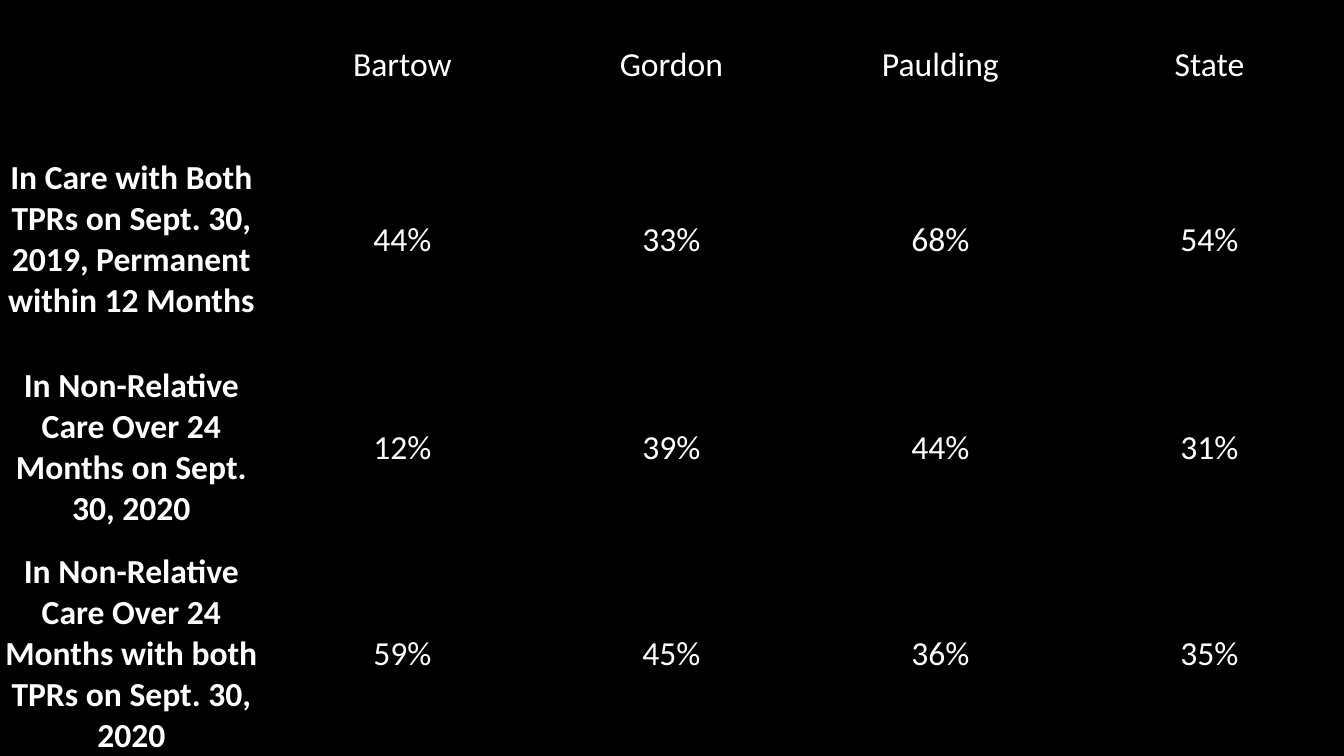
import pptx
import pptx.dml.color
import pptx.enum.text
import pptx.oxml.ns
import pptx.util
import lxml.etree

Cm = pptx.util.Cm
COLOURS = {"background": "000000", "text": "FFFFFF"}
COLUMN_WIDTHS = [6.88] + [6.78] * 4
ROW_HEIGHTS = [3.3, 5.49, 5, 5.23]
OUTCOMES = [
    ["", "Bartow", "Gordon", "Paulding", "State"],
    ["In Care with Both TPRs on Sept. 30, 2019, Permanent within 12 Months",
     "44%", "33%", "68%", "54%"],
    ["In Non-Relative Care Over 24 Months on Sept. 30, 2020",
     "12%", "39%", "44%", "31%"],
    ["In Non-Relative Care Over 24 Months with both TPRs on Sept. 30, 2020",
     "59%", "45%", "36%", "35%"],
]


class SlideBuilder:
    font_name = "Calibri"
    font_size = pptx.util.Pt(24)
    margin = Cm(0.1)

    def __init__(self, deck):
        self.slide = deck.slides.add_slide(deck.slide_layouts[6])

    def colour(self, name):
        return pptx.dml.color.RGBColor.from_string(COLOURS[name])

    def background(self, name):
        fill = self.slide.background.fill
        fill.solid()
        fill.fore_color.rgb = self.colour(name)

    def table(self, rows, left, top, widths, heights):
        frame = self.slide.shapes.add_table(
            len(rows), len(widths), Cm(left), Cm(top),
            Cm(sum(widths)), Cm(sum(heights)))
        table = frame.table
        table.first_row = table.horz_banding = False
        for column, width in zip(table.columns, widths):
            column.width = Cm(width)
        for row, height, texts in zip(table.rows, heights, rows):
            row.height = Cm(height)
            for index, (cell, text) in enumerate(zip(row.cells, texts)):
                self.cell(cell, text, bold=index == 0)

    def cell(self, cell, text, bold):
        cell.margin_left = cell.margin_right = self.margin
        cell.margin_top = cell.margin_bottom = self.margin
        cell.vertical_anchor = pptx.enum.text.MSO_ANCHOR.MIDDLE
        self.clear_borders(cell)
        cell.fill.background()
        cell.text_frame.text = text
        para = cell.text_frame.paragraphs[0]
        para.alignment = pptx.enum.text.PP_ALIGN.CENTER
        for span in para.runs:
            span.font.name = self.font_name
            span.font.size = self.font_size
            span.font.bold = bold
            span.font.color.rgb = self.colour("text")

    def clear_borders(self, cell):
        properties = cell._tc.get_or_add_tcPr()
        for side in ("a:lnL", "a:lnR", "a:lnT", "a:lnB"):
            border = lxml.etree.SubElement(properties, pptx.oxml.ns.qn(side))
            lxml.etree.SubElement(border, pptx.oxml.ns.qn("a:noFill"))


def main():
    deck = pptx.Presentation()
    deck.slide_width = Cm(33.87)
    deck.slide_height = Cm(19.05)
    page = SlideBuilder(deck)
    page.background("background")
    page.table(OUTCOMES, -0.13, 0, COLUMN_WIDTHS, ROW_HEIGHTS)
    deck.save("out.pptx")


if __name__ == "__main__":
    main()
